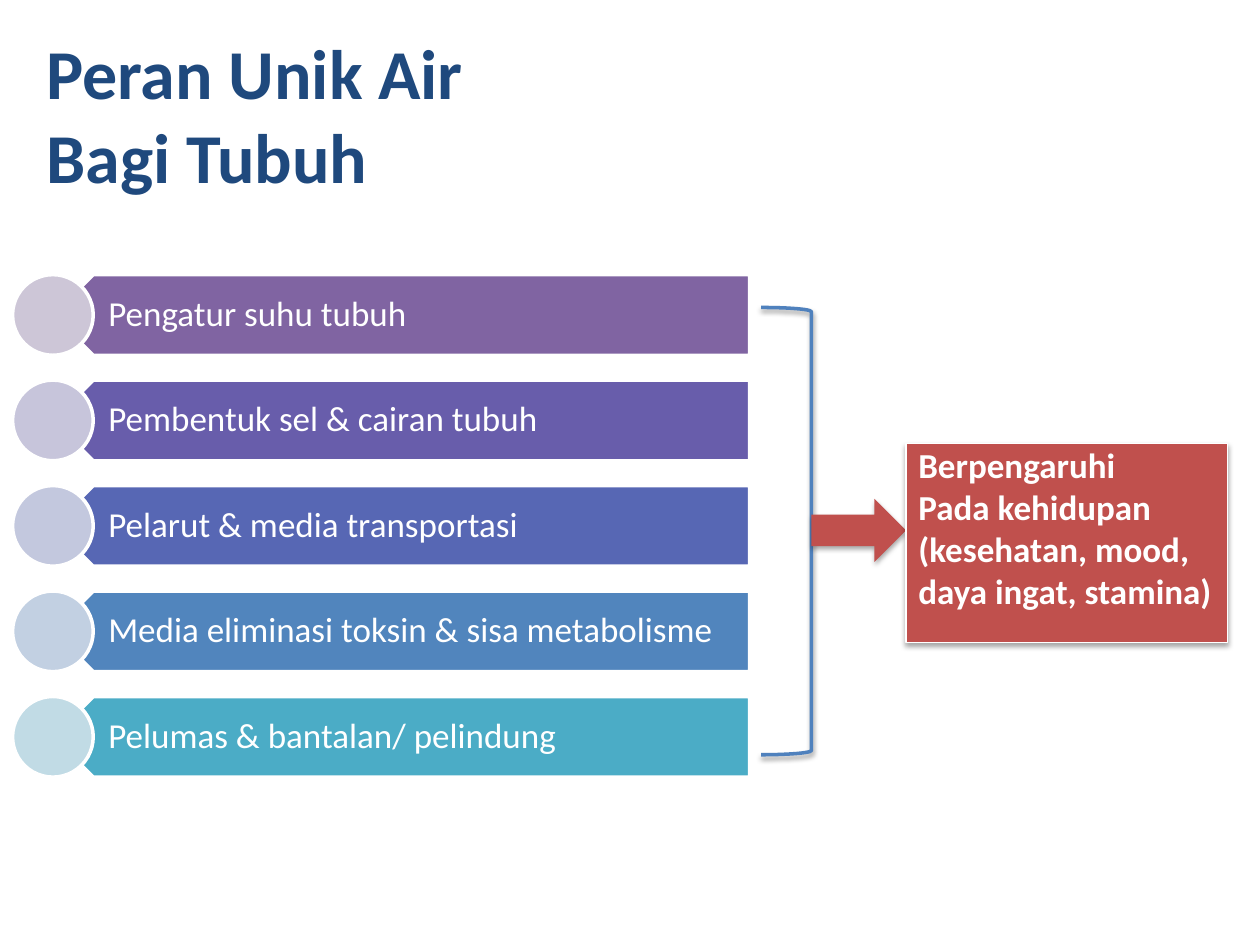
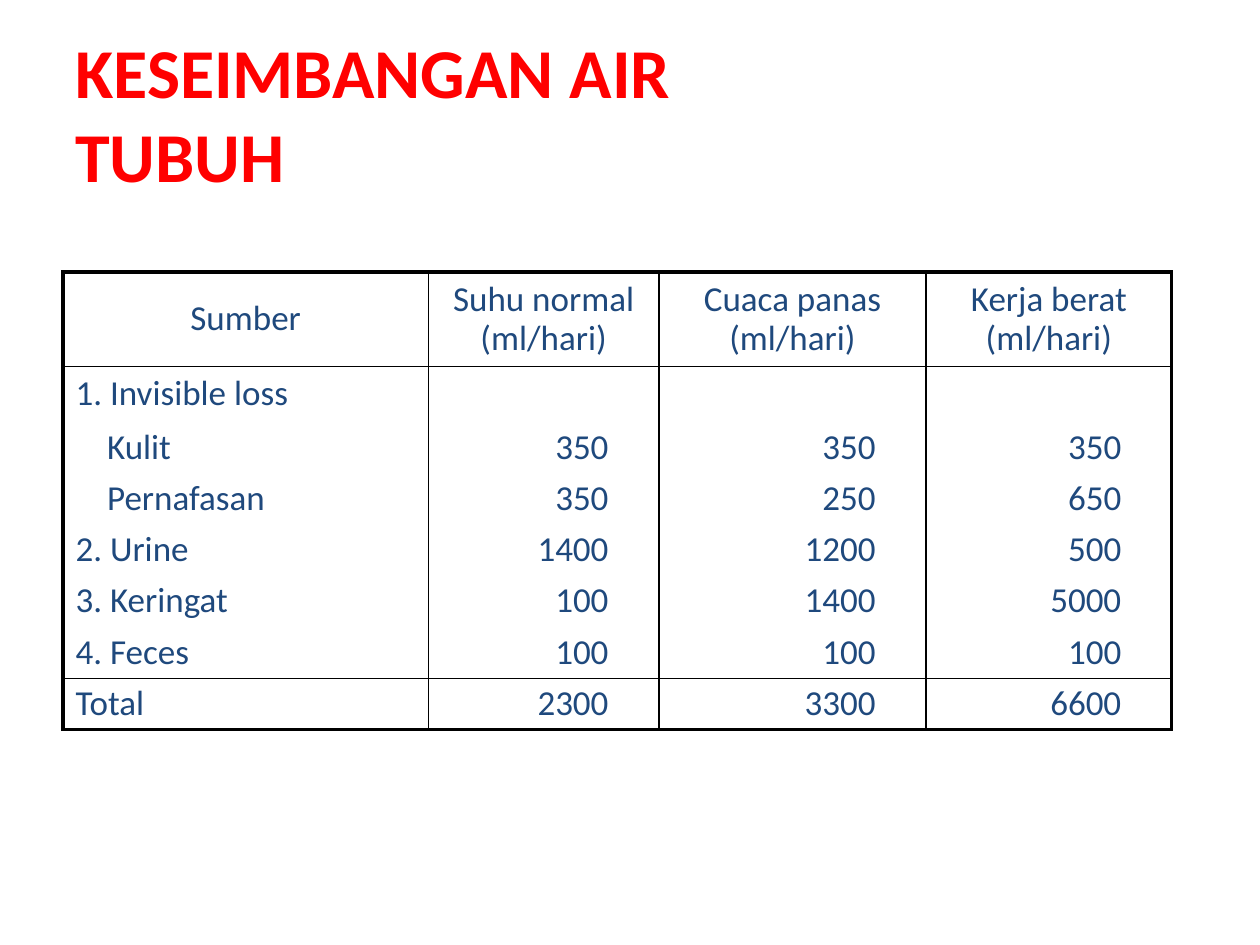
from dataclasses import dataclass

from lxml.etree import SubElement as Sub
from pptx import Presentation
from pptx.dml.color import RGBColor as Rgb
from pptx.enum.shapes import MSO_SHAPE as Kind
from pptx.enum.text import MSO_ANCHOR as Anchor, PP_ALIGN as Align
from pptx.oxml.ns import qn
from pptx.util import Inches, Pt


@dataclass(frozen=True)
class Theme:
    """Hold the colours, font and type sizes."""
    font: str = "Calibri"
    head: int = 40
    body: int = 20
    navy: str = "1F497D"
    red: str = "FF0000"
    brick: str = "C0504D"
    blue: str = "4F81BD"
    white: str = "FFFFFF"
    black: str = "000000"
    thick: float = 2.25
    thin: float = 1


LOOK = Theme()
COLS, ROWS = 100, 75
WIDE, HIGH = Inches(10), Inches(7.5)
PAD = (1, 0.5, 1, 0.5)

ROLES = [
    ("Pengatur suhu tubuh", "8064A2", "CDC6D7"),
    ("Pembentuk sel & cairan tubuh", "685DAB", "C7C5DB"),
    ("Pelarut & media transportasi", "5767B4", "C3C8DE"),
    ("Media eliminasi toksin & sisa metabolisme", "5185BD", "C2D0E2"),
    ("Pelumas & bantalan/ pelindung", "4BACC6", "C1DBE5"),
]
EFFECT = "Berpengaruhi\nPada kehidupan\n(kesehatan, mood,\ndaya ingat, stamina)"
LOSSES = [
    ("Sumber", "Suhu normal (ml/hari)", "Cuaca panas (ml/hari)",
     "Kerja berat (ml/hari)"),
    ("1. Invisible loss", "", "", ""),
    ("Kulit", "350", "350", "350"),
    ("Pernafasan", "350", "250", "650"),
    ("2. Urine", "1400", "1200", "500"),
    ("3. Keringat", "100", "1400", "5000"),
    ("4. Feces", "100", "100", "100"),
    ("Total", "2300", "3300", "6600"),
]
PARTS = ("Kulit", "Pernafasan")


def across(cols):
    """Turn grid columns into a length."""
    return round(WIDE * cols / COLS)


def down(rows):
    """Turn grid rows into a length."""
    return round(HIGH * rows / ROWS)


def write(frame, text, size=LOOK.body, color=LOOK.white, bold=False,
          align=Align.LEFT, space=1.0, left=0, hang=0):
    """Fill a text frame, one paragraph a line."""
    for i, line in enumerate(text.split("\n")):
        para = frame.add_paragraph() if i else frame.paragraphs[0]
        para.text = line
        para.alignment, para.line_spacing = align, space
        props = para._p.get_or_add_pPr()
        props.set("marL", str(across(left)))
        props.set("indent", str(-across(hang)))
        for run in para.runs:
            font = run.font
            font.name, font.size, font.bold = LOOK.font, Pt(size), bold
            font.color.rgb = Rgb.from_string(color)


def inset(box, pad):
    """Set the margins of a frame or cell."""
    box.margin_left, box.margin_right = across(pad[0]), across(pad[2])
    box.margin_top, box.margin_bottom = down(pad[1]), down(pad[3])


def tint(node, color):
    """Add an RGB colour to an XML node."""
    return Sub(node, qn("a:srgbClr"), val=color)


def edge(cell, side, width):
    """Draw one cell border, or hide it when width is zero."""
    line = Sub(cell._tc.get_or_add_tcPr(), qn("a:ln" + side), w=str(Pt(width)))
    if width:
        tint(Sub(line, qn("a:solidFill")), LOOK.black)
    else:
        Sub(line, qn("a:noFill"))


class Deck:
    """Hold the style and the current slide."""

    def __init__(self, look):
        """Start an empty deck."""
        self.look, self.page = look, None
        self.show = Presentation()
        self.show.slide_width, self.show.slide_height = WIDE, HIGH

    def start(self):
        """Add a blank slide."""
        self.page = self.show.slides.add_slide(self.show.slide_layouts[6])

    def place(self, x, y, w, h):
        """Turn a grid box into lengths."""
        return across(x), down(y), across(w), down(h)

    def label(self, box, text, pad=PAD, **form):
        """Add a text box centred in height."""
        frame = self.page.shapes.add_textbox(*self.place(*box)).text_frame
        frame.word_wrap, frame.vertical_anchor = True, Anchor.MIDDLE
        inset(frame, pad)
        write(frame, text, **form)

    def title(self, box, text, color):
        """Add a slide title."""
        self.label(box, text, size=self.look.head, color=color, bold=True)

    def shape(self, kind, box, fill=None, line=None, width=2, turn=0,
              shade=None):
        """Add a preset shape, with a soft shadow if shade is given."""
        item = self.page.shapes.add_shape(kind, *self.place(*box))
        item.shadow.inherit = False
        item.rotation = turn
        for part, color in ((item.fill, fill), (item.line.fill, line)):
            if color:
                part.solid()
                part.fore_color.rgb = Rgb.from_string(color)
            else:
                part.background()
        if line:
            item.line.width = Pt(width)
        if shade:
            alpha, dist = shade
            glow = Sub(item._element.spPr.find(qn("a:effectLst")),
                       qn("a:outerShdw"), blurRad=str(Pt(3.1)),
                       dist=str(Pt(dist)), dir="5400000", rotWithShape="0")
            Sub(tint(glow, self.look.black), qn("a:alpha"),
                val=str(alpha * 1000))
        return item

    def table(self, spot, wide, high, data):
        """Add a framed table with ruled first and last rows."""
        size = (sum(wide), sum(high))
        grid = self.page.shapes.add_table(
            len(high), len(wide), *self.place(*spot, *size)).table
        grid.first_row = grid.horz_banding = False
        for col, w in zip(grid.columns, wide):
            col.width = across(w)
        for row, h in zip(grid.rows, high):
            row.height = down(h)
        for r, row in enumerate(data):
            for c, text in enumerate(row):
                self.cell(grid.cell(r, c), text, r, c, len(high), len(wide))

    def cell(self, cell, text, r, c, rows, cols):
        """Style one table cell by its place."""
        thick, thin = self.look.thick, self.look.thin
        number = r > 0 and c > 0
        rules = {0: thick, 1: thin, rows - 1: thin, rows: thick}
        cell.vertical_anchor = Anchor.MIDDLE
        inset(cell, (1, 0.5, 4, 0.5) if number else PAD)
        align = Align.RIGHT if number else Align.LEFT
        write(cell.text_frame, text, color=self.look.navy, space=0.9,
              align=align if r else Align.CENTER,
              left=2.5 if text in PARTS else 0)
        edge(cell, "L", thin if c else thick)
        edge(cell, "R", thin if c < cols - 1 else thick)
        edge(cell, "T", rules.get(r, 0))
        edge(cell, "B", rules.get(r + 1, 0))
        cell.fill.background()


def roles(deck):
    """Build the slide on the roles of water."""
    look = deck.look
    deck.start()
    deck.title((2.7, 1, 61.7, 16), "Peran Unik Air\vBagi Tubuh", look.navy)
    side, top, step = 6.4, 21.8, 8.37
    for i, (text, dark, pale) in enumerate(ROLES):
        y = top + i * step
        deck.shape(Kind.PENTAGON, (4.2, y, 55.3, side), dark, look.white,
                   turn=180)
        deck.label((5.8, y, 53.7, side), text, pad=(2.8, 0.8, 1.6, 0.8),
                   space=0.9)
        deck.shape(Kind.OVAL, (1, y, side, side), pale, look.white)
    deck.shape(Kind.RIGHT_BRACKET, (60.4, 24.4, 4, 35.5), line=look.blue,
               shade=(38, 1.6))
    soft = (35, 1.8)
    deck.shape(Kind.RIGHT_ARROW, (64.4, 39.6, 7.5, 5), look.brick, shade=soft)
    card = deck.shape(Kind.RECTANGLE, (71.9, 35.2, 25.5, 15.8), look.brick,
                      look.white, 0.75, shade=soft).text_frame
    card.word_wrap, card.vertical_anchor = True, Anchor.TOP
    inset(card, (1, 0, 1, 0))
    write(card, EFFECT, bold=True, left=5.6, hang=5.6)


def balance(deck):
    """Build the slide on the water balance."""
    deck.start()
    deck.title((5, 2.7, 57.5, 12.5), "KESEIMBANGAN AIR TUBUH", deck.look.red)
    deck.table((5, 21.6), (29, 18.3, 21.2, 19.5),
               (7.5, 4.4) + (4.07,) * 6, LOSSES)


def main():
    """Build and save the deck."""
    deck = Deck(LOOK)
    roles(deck)
    balance(deck)
    deck.show.save("out.pptx")


if __name__ == "__main__":
    main()
